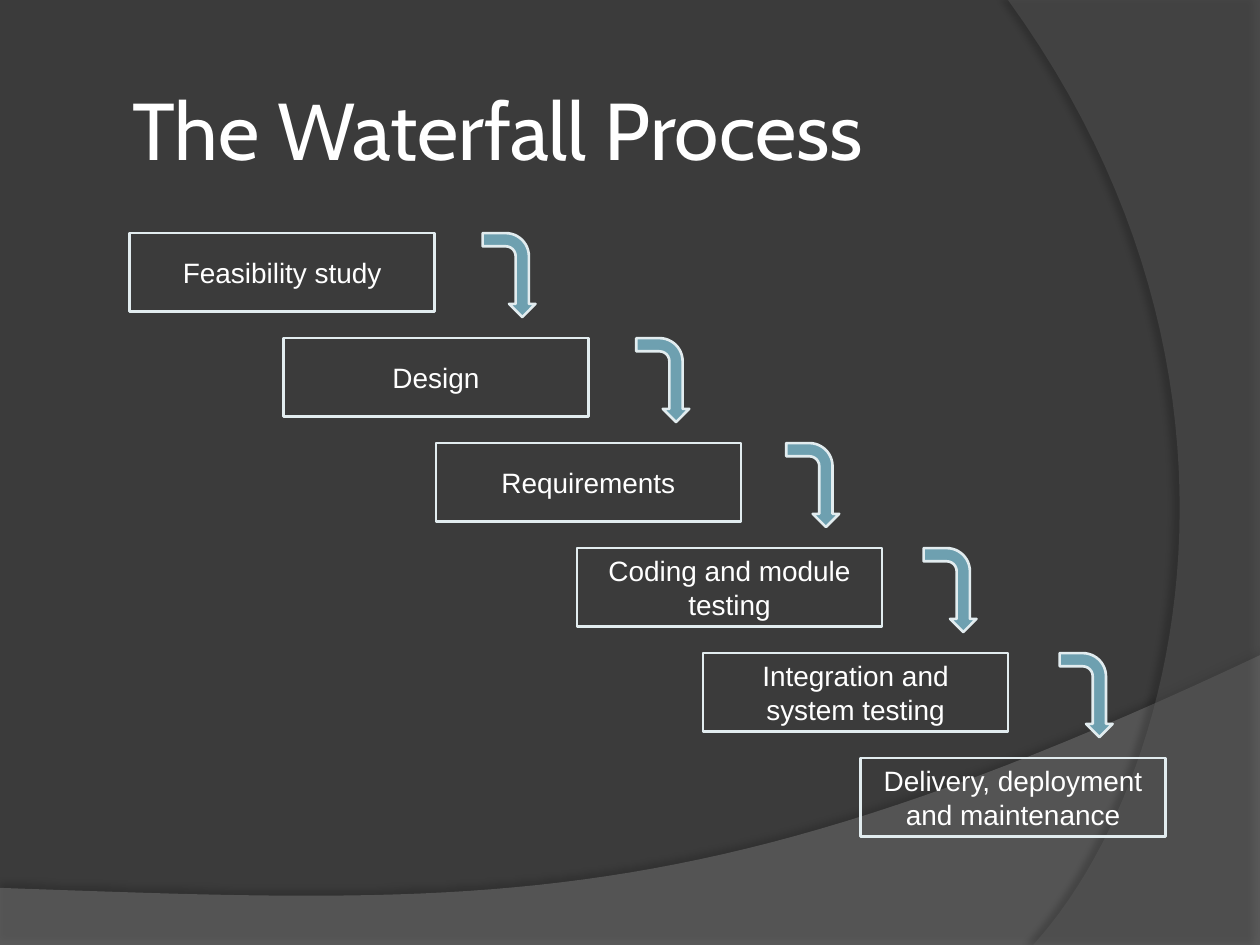
import lxml.etree
import pptx
import pptx.dml.color
import pptx.enum.shapes
import pptx.enum.text
import pptx.oxml.ns
import pptx.util

COLS, ROWS = 10, 9
COLORS = {"background": "3B3B3B", "wave": "7F7F7F", "arc": "5E5E5E", "shadow": "000000",
          "arrow": "6EA0B0", "outline": "E2ECEF", "text": "FFFFFF"}
STEPS = [  # label, box column, arrow column
    ("Feasibility study", 1.03, 3.83),
    ("Design", 2.25, 5.05),
    ("Requirements", 3.46, 6.24),
    ("Coding and module testing", 4.58, 7.33),
    ("Integration and system testing", 5.58, 8.41),
    ("Delivery, deployment and maintenance", 6.83, None),
]
STEPS_BOX = (0, 2.22, 10, 6)
WAVE = {"box": (0, 6.24, 10, 2.77), "corners": [(0, 0.8), (0, 1), (1, 1), (1, 0)],
        "controls": [(0.56, 0.9), (0.39, 0.86), (0, 0.8)]}
ARC = {"box": (8, 0, 2, 9), "corners": [(1, 0), (1, 1), (0.1, 1)],
       "controls": [(0.68, 0.83), (1.09, 0.4), (0, 0)]}


def rgb(name):
    """Return the named colour."""
    return pptx.dml.color.RGBColor.from_string(COLORS[name])


def place(prs, x, y, w, h):
    """Turn grid columns and rows into lengths."""
    col, row = prs.slide_width / COLS, prs.slide_height / ROWS
    return [round(v) for v in (x * col, y * row, w * col, h * row)]


def write(sp, text, font, size, align, margins=None):
    """Put formatted text in a shape."""
    tf = sp.text_frame
    tf.word_wrap = True
    tf.vertical_anchor = pptx.enum.text.MSO_ANCHOR.MIDDLE
    if margins is not None:
        tf.margin_left = tf.margin_right = tf.margin_top = tf.margin_bottom = margins
    p = tf.paragraphs[0]
    p.alignment = align
    r = p.add_run()
    r.text = text
    r.font.name, r.font.size = font, pptx.util.Pt(size)
    r.font.color.rgb = rgb("text")


def bezier(points, count=48):
    """Sample a cubic curve after its first point."""
    weights = [((1 - t) ** 3, 3 * t * (1 - t) ** 2, 3 * t * t * (1 - t), t ** 3)
               for t in (i / count for i in range(1, count + 1))]
    return [tuple(sum(w * p[axis] for w, p in zip(ws, points)) for axis in (0, 1))
            for ws in weights]


def add_alpha(color, percent):
    """Make a colour element translucent."""
    lxml.etree.SubElement(color, pptx.oxml.ns.qn("a:alpha"), val=str(percent * 1000))


def add_shadow(sp, opacity, blur, distance, angle):
    """Give a shape an outer shadow."""
    qn = pptx.oxml.ns.qn
    effects = lxml.etree.SubElement(sp._element.spPr, qn("a:effectLst"))
    shadow = lxml.etree.SubElement(
        effects, qn("a:outerShdw"), blurRad=str(pptx.util.Pt(blur)),
        dist=str(pptx.util.Pt(distance)), dir=str(angle * 60000), algn="ctr", rotWithShape="0")
    color = lxml.etree.SubElement(shadow, qn("a:srgbClr"), val=COLORS["shadow"])
    add_alpha(color, opacity)


def add_swoosh(prs, s, box, corners, controls, color, opacity, shadow):
    """Draw a translucent curved region inside a box."""
    x, y, w, h = place(prs, *box)
    outline = corners + bezier([corners[-1]] + controls)
    points = [(round(x + px * w), round(y + py * h)) for px, py in outline]
    builder = s.shapes.build_freeform(*points[0])
    builder.add_line_segments(points[1:], close=True)
    sp = builder.convert_to_shape()
    sp.fill.solid()
    sp.fill.fore_color.rgb = rgb(color)
    add_alpha(sp._element.spPr.find(".//" + pptx.oxml.ns.qn("a:srgbClr")), opacity)
    sp.line.fill.background()
    add_shadow(sp, *shadow)


def add_title(prs, s, box, text):
    """Place and format the slide title."""
    sp = s.shapes.title
    sp.left, sp.top, sp.width, sp.height = place(prs, *box)
    write(sp, text, font="Cabin", size=46, align=pptx.enum.text.PP_ALIGN.LEFT,
          margins=pptx.util.Inches(0.05))


def add_outlined(shapes, kind, bounds, fill=None):
    """Add a preset shape with the pale outline."""
    sp = shapes.add_shape(kind, *bounds)
    sp.shadow.inherit = False
    if fill:
        sp.fill.solid()
        sp.fill.fore_color.rgb = rgb(fill)
    else:
        sp.fill.background()
    sp.line.color.rgb = rgb("outline")
    sp.line.width = pptx.util.Pt(1.5)
    return sp


def add_waterfall(prs, s, box):
    """Draw one step and its down arrow in each row of the box."""
    kinds = pptx.enum.shapes.MSO_SHAPE
    left, top, _, height = box
    pitch = height / len(STEPS)
    group = s.shapes.add_group_shape()
    for i, (label, step_col, arrow_col) in enumerate(STEPS):
        y = top + i * pitch
        bounds = place(prs, left + step_col, y, 2.42, 0.75 * pitch)
        sp = add_outlined(group.shapes, kinds.RECTANGLE, bounds)
        write(sp, label, font="Arial", size=16, align=pptx.enum.text.PP_ALIGN.CENTER)
        if arrow_col is not None:
            x, y, w, h = place(prs, left + arrow_col, y, 0.42, 0.8 * pitch)
            turned = (x + (w - h) // 2, y + (h - w) // 2, h, w)
            arrow = add_outlined(group.shapes, kinds.BENT_ARROW, turned, fill="arrow")
            arrow.rotation = 90


def main():
    """Build the waterfall slide."""
    prs = pptx.Presentation()
    prs.slide_width, prs.slide_height = pptx.util.Inches(10), pptx.util.Inches(7.5)
    s = prs.slides.add_slide(prs.slide_layouts[5])
    s.background.fill.solid()
    s.background.fill.fore_color.rgb = rgb("background")
    add_swoosh(prs, s, **WAVE, color="wave", opacity=45, shadow=(35, 4, 3.5, 270))
    add_swoosh(prs, s, **ARC, color="arc", opacity=40, shadow=(45, 4, 4, 180))
    add_title(prs, s, (1, 0.62, 8.5, 1.2), "The Waterfall Process")
    add_waterfall(prs, s, STEPS_BOX)
    prs.save("out.pptx")


if __name__ == "__main__":
    main()
